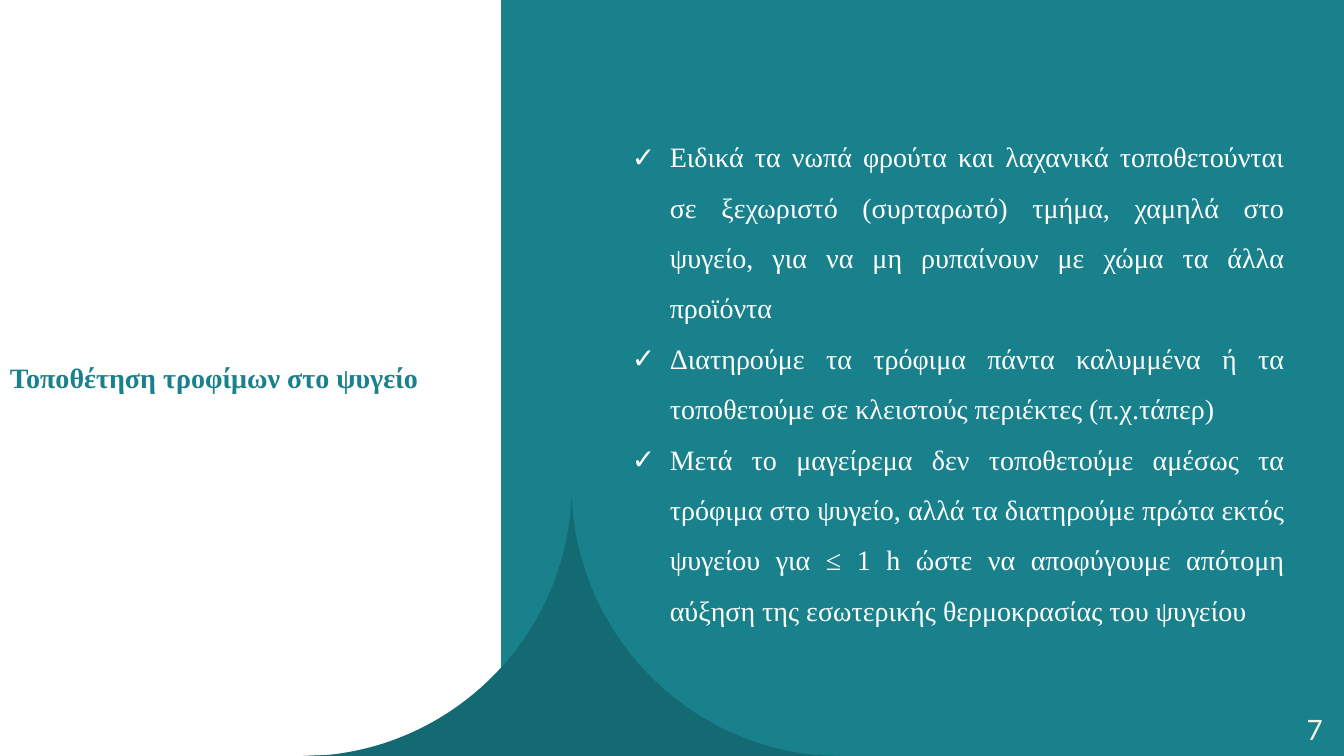
from dataclasses import dataclass

import lxml.etree
import pptx
import pptx.dml.color
import pptx.enum.shapes
import pptx.enum.text
import pptx.oxml.ns
import pptx.slide
import pptx.util

Inches = pptx.util.Inches
Align = pptx.enum.text.PP_ALIGN
Anchor = pptx.enum.text.MSO_ANCHOR
qn = pptx.oxml.ns.qn
Point = tuple[float, float]


@dataclass(frozen=True)
class Theme:
    teal: str = "18818C"
    dark_teal: str = "126169"
    white: str = "FFFFFF"
    cream: str = "F4F2EC"
    serif: str = "Times New Roman"
    sans: str = "Lato"
    text_size: int = 20


@dataclass(frozen=True)
class TextBlock:
    left: float
    top: float
    width: float
    height: float
    paragraphs: tuple[str, ...]
    font: str
    color: str
    bold: bool = False
    align: Align = Align.LEFT
    anchor: Anchor = Anchor.TOP
    wrap: bool = True
    line_spacing: float = 1.0
    bullet: str = ""


@dataclass(frozen=True)
class SpireLayer:
    color: str
    opacity: int


THEME = Theme()
SLIDE_WIDTH, SLIDE_HEIGHT = 13.33, 7.5
PANEL_LEFT = 4.97
BULLET_INDENT = 3 / 8
SPIRE_CENTER = 5.67
SPIRE_TIP: Point = (SPIRE_CENTER, 4.93)
SPIRE_BASE: Point = (3.01, SLIDE_HEIGHT)
SPIRE_CURVE: tuple[Point, ...] = ((3.26, 7.49), (4.53, 7.36), (5.54, 6.34), (5.66, 5.07))
SPIRE_LAYERS = (SpireLayer(THEME.teal, 100), SpireLayer(THEME.dark_teal, 70))

TEXT_BLOCKS = (
    TextBlock(12.46, 7.04, 0.76, 0.4, ("7",), THEME.sans, THEME.cream,
              align=Align.RIGHT, anchor=Anchor.MIDDLE),
    TextBlock(0, 3.53, 4.29, 0.44, ("Τοποθέτηση τροφίμων στο ψυγείο",),
              THEME.serif, THEME.teal, bold=True, wrap=False),
    TextBlock(
        6.17, 1.17, 6.67, 5.15,
        (
            "Ειδικά τα νωπά φρούτα και λαχανικά τοποθετούνται σε ξεχωριστό (συρταρωτό) "
            "τμήμα, χαμηλά στο ψυγείο, για να μη ρυπαίνουν με χώμα τα άλλα προϊόντα",
            "Διατηρούμε τα τρόφιμα πάντα καλυμμένα ή τα τοποθετούμε σε κλειστούς "
            "περιέκτες (π.χ.τάπερ)",
            "Μετά το μαγείρεμα δεν τοποθετούμε αμέσως τα τρόφιμα στο ψυγείο, αλλά τα "
            "διατηρούμε πρώτα εκτός ψυγείου για ≤ 1 h ώστε να αποφύγουμε απότομη "
            "αύξηση της εσωτερικής θερμοκρασίας του ψυγείου",
        ),
        THEME.serif, THEME.white, align=Align.JUSTIFY, line_spacing=1.5, bullet="✓",
    ),
)


def rgb(color: str) -> pptx.dml.color.RGBColor:
    return pptx.dml.color.RGBColor.from_string(color)


def paint(shape, color: str, opacity: int = 100) -> None:
    shape.shadow.inherit = False
    shape.line.fill.background()
    shape.fill.solid()
    shape.fill.fore_color.rgb = rgb(color)
    if opacity < 100:
        color_element = shape._element.spPr.find(f"{qn('a:solidFill')}/{qn('a:srgbClr')}")
        alpha = lxml.etree.SubElement(color_element, qn("a:alpha"))
        alpha.set("val", str(opacity * 1000))


def bend(segments: list) -> None:
    """Merge three straight segments into one cubic Bézier segment."""
    first = segments[0]
    curve = first.makeelement(qn("a:cubicBezTo"), {})
    first.addprevious(curve)
    for segment in segments:
        curve.append(segment[0])
        segment.getparent().remove(segment)


def add_spire(slide: pptx.slide.Slide, layer: SpireLayer) -> None:
    """Draw the curved spire, its right side mirroring its left."""
    left_side = (SPIRE_BASE, *SPIRE_CURVE)
    right_side = [(2 * SPIRE_CENTER - x, y) for x, y in reversed(left_side)]
    outline = [(Inches(x), Inches(y)) for x, y in (*left_side, SPIRE_TIP, *right_side)]
    builder = slide.shapes.build_freeform(*outline[0])
    builder.add_line_segments(outline[1:], close=True)
    spire = builder.convert_to_shape()
    segments = list(spire._element.iter(qn("a:lnTo")))
    for start in (1, 6):
        bend(segments[start:start + 3])
    paint(spire, layer.color, layer.opacity)


def add_bullet(paragraph, character: str) -> None:
    properties = paragraph._p.get_or_add_pPr()
    properties.set("marL", str(Inches(BULLET_INDENT)))
    properties.set("indent", str(-Inches(BULLET_INDENT)))
    for tag, attributes in (("a:buFont", {"typeface": THEME.sans}),
                            ("a:buChar", {"char": character})):
        properties.insert_element_before(
            properties.makeelement(qn(tag), attributes),
            "a:tabLst", "a:defRPr", "a:extLst")


def add_text(slide: pptx.slide.Slide, block: TextBlock) -> None:
    box = slide.shapes.add_textbox(Inches(block.left), Inches(block.top),
                                   Inches(block.width), Inches(block.height))
    frame = box.text_frame
    frame.word_wrap = block.wrap
    frame.vertical_anchor = block.anchor
    frame.text = "\n".join(block.paragraphs)
    for paragraph in frame.paragraphs:
        paragraph.alignment = block.align
        paragraph.line_spacing = block.line_spacing
        paragraph.font.name = block.font
        paragraph.font.size = pptx.util.Pt(THEME.text_size)
        paragraph.font.bold = block.bold
        paragraph.font.color.rgb = rgb(block.color)
        if block.bullet:
            add_bullet(paragraph, block.bullet)


def main() -> None:
    presentation = pptx.Presentation()
    presentation.slide_width = Inches(SLIDE_WIDTH)
    presentation.slide_height = Inches(SLIDE_HEIGHT)
    slide = presentation.slides.add_slide(presentation.slide_layouts[6])

    panel = slide.shapes.add_shape(
        pptx.enum.shapes.MSO_SHAPE.RECTANGLE, Inches(PANEL_LEFT), 0,
        Inches(SLIDE_WIDTH - PANEL_LEFT), Inches(SLIDE_HEIGHT))
    paint(panel, THEME.teal)
    for layer in SPIRE_LAYERS:
        add_spire(slide, layer)
    for block in TEXT_BLOCKS:
        add_text(slide, block)

    presentation.save("out.pptx")


if __name__ == "__main__":
    main()
